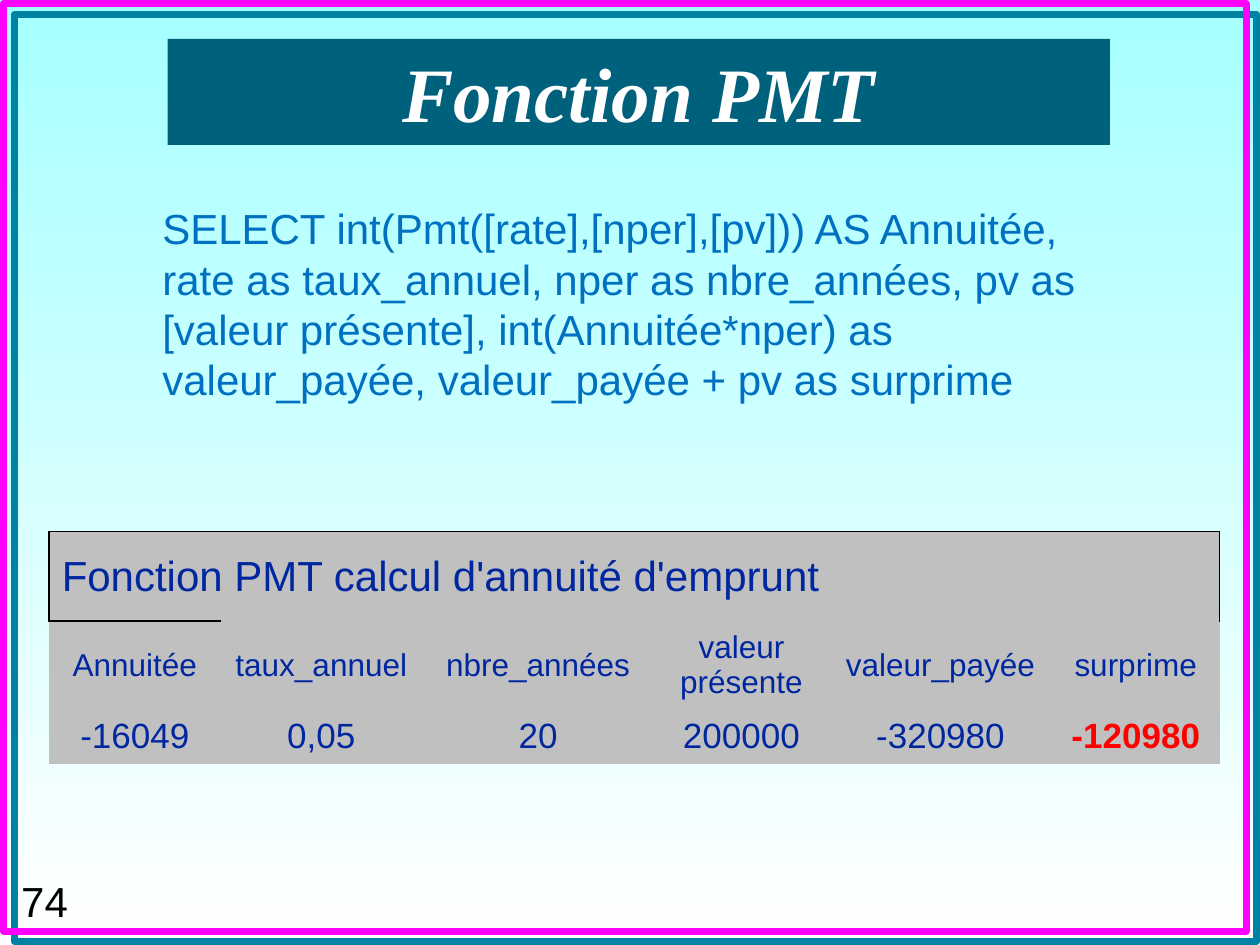
from dataclasses import dataclass

from lxml.etree import SubElement
from pptx import Presentation
from pptx.dml.color import RGBColor
from pptx.enum.shapes import MSO_SHAPE
from pptx.enum.text import MSO_ANCHOR, PP_ALIGN
from pptx.oxml import parse_xml
from pptx.oxml.ns import nsdecls, qn
from pptx.util import Inches, Pt

SKY = RGBColor(0xA6, 0xFF, 0xFF)
WHITE = RGBColor(0xFF, 0xFF, 0xFF)
BLACK = RGBColor(0, 0, 0)
MAGENTA = RGBColor(0xFF, 0, 0xFF)
TEAL = RGBColor(0x00, 0x61, 0x7C)
SHADOW = RGBColor(0x00, 0x82, 0xA5)
BLUE = RGBColor(0x00, 0x70, 0xC0)
NAVY = RGBColor(0x00, 0x27, 0x9F)
RED = RGBColor(0xFF, 0, 0)
GREY = RGBColor(0xC0, 0xC0, 0xC0)

QUERY = (
    "SELECT int(Pmt([rate],[nper],[pv])) AS Annuitée, rate as taux_annuel, "
    "nper as nbre_années, pv as [valeur présente], int(Annuitée*nper) as "
    "valeur_payée, valeur_payée + pv as surprime"
)
CAPTION = "Fonction PMT calcul d'annuité d'emprunt"
ROW_HEIGHTS = (0.71, 0.66, 0.42)


@dataclass(frozen=True)
class Style:
    size: float
    color: RGBColor
    font: str = "Arial"
    bold: bool = False
    italic: bool = False


@dataclass(frozen=True)
class Column:
    width: float
    header: str
    value: str
    style: Style = Style(20, NAVY)


COLUMNS = (
    Column(1.36, "Annuitée", "-16049"),
    Column(1.6, "taux_annuel", "0,05"),
    Column(1.84, "nbre_années", "20"),
    Column(1.39, "valeur présente", "200000"),
    Column(1.77, "valeur_payée", "-320980"),
    Column(1.33, "surprime", "-120980", Style(20, RED, bold=True)),
)


def write(tf, text: str, style: Style, align=PP_ALIGN.LEFT):
    """Add one styled run to the first paragraph and return the paragraph."""
    p = tf.paragraphs[0]
    p.alignment = align
    r = p.add_run()
    r.text = text
    r.font.name = style.font
    r.font.size = Pt(style.size)
    r.font.bold = style.bold
    r.font.italic = style.italic
    r.font.color.rgb = style.color
    return p


def add_text(s, text: str, style: Style, box: tuple, wrap: bool = True):
    """Add a text box and return its paragraph."""
    tf = s.shapes.add_textbox(*map(Inches, box)).text_frame
    tf.word_wrap = wrap
    return write(tf, text, style)


def add_frame(s) -> None:
    """Draw the outline around the slide with its offset shadow."""
    sp = s.shapes.add_shape(
        MSO_SHAPE.RECTANGLE, Inches(0.03), Inches(0.03), Inches(9.86), Inches(7.36)
    )
    sp.fill.background()
    sp.line.color.rgb = MAGENTA
    sp.line.width = Pt(4)
    sp.shadow.inherit = False
    effects = sp._element.spPr.find(qn("a:effectLst"))
    shadow = SubElement(
        effects, qn("a:outerShdw"), dist=str(Pt(8.5)), dir="2700000",
        algn="ctr", rotWithShape="0",
    )
    SubElement(shadow, qn("a:srgbClr"), val=str(SHADOW))


def add_title(s, text: str) -> None:
    """Draw the title band."""
    sp = s.shapes.add_shape(
        MSO_SHAPE.RECTANGLE, Inches(1.33), Inches(0.31), Inches(7.48), Inches(0.84)
    )
    sp.fill.solid()
    sp.fill.fore_color.rgb = TEAL
    sp.line.fill.background()
    sp.shadow.inherit = False
    sp.text_frame.vertical_anchor = MSO_ANCHOR.MIDDLE
    style = Style(44, WHITE, "Times New Roman", True, True)
    write(sp.text_frame, text, style, PP_ALIGN.CENTER)


def format_cell(cell, sides: str) -> None:
    """Fill a cell and border only the given sides."""
    cell.fill.solid()
    cell.fill.fore_color.rgb = GREY
    cell.vertical_anchor = MSO_ANCHOR.MIDDLE
    for i, side in enumerate("LRTB"):
        paint = (
            f'<a:solidFill><a:srgbClr val="{BLACK}"/></a:solidFill>'
            if side in sides else "<a:noFill/>"
        )
        ln = f'<a:ln{side} {nsdecls("a")} w="{Pt(1)}">{paint}</a:ln{side}>'
        cell._tc.get_or_add_tcPr().insert(i, parse_xml(ln))


def add_result_table(s) -> None:
    """Build the table of query results under its caption."""
    width = sum(c.width for c in COLUMNS)
    table = s.shapes.add_table(
        len(ROW_HEIGHTS), len(COLUMNS), Inches(0.39), Inches(4.22),
        Inches(width), Inches(sum(ROW_HEIGHTS)),
    ).table
    table.first_row = table.horz_banding = False
    for row, height in zip(table.rows, ROW_HEIGHTS):
        row.height = Inches(height)
    last = len(COLUMNS) - 1
    for i, column in enumerate(COLUMNS):
        table.columns[i].width = Inches(column.width)
        caption, header, value = (table.cell(j, i) for j in range(3))
        format_cell(caption, "LRTB" if i == 0 else "TR" if i == last else "T")
        format_cell(header, "T" if i == 0 else "")
        format_cell(value, "")
        write(header.text_frame, column.header, Style(18, NAVY), PP_ALIGN.CENTER)
        write(value.text_frame, column.value, column.style, PP_ALIGN.CENTER)
    table.cell(0, 0).merge(table.cell(0, last))
    write(table.cell(0, 0).text_frame, CAPTION, Style(24, NAVY))


def main() -> None:
    """Build the slide and save it."""
    prs = Presentation()
    prs.slide_width, prs.slide_height = Inches(10), Inches(7.5)
    s = prs.slides.add_slide(prs.slide_layouts[6])
    fill = s.background.fill
    fill.gradient()
    fill.gradient_angle = 270
    for stop, color in zip(fill.gradient_stops, (SKY, WHITE)):
        stop.color.rgb = color
    add_text(s, "74", Style(24, BLACK), (0.07, 6.9, 0.8, 0.5), wrap=False)
    add_frame(s)
    add_title(s, "Fonction PMT")
    p = add_text(s, QUERY, Style(24, BLUE), (0.81, 1.56, 8.25, 2.03))
    p.space_before = Pt(4.8)
    p._p.get_or_add_pPr().set("marL", str(Inches(0.38)))
    add_result_table(s)
    prs.save("out.pptx")


if __name__ == "__main__":
    main()
